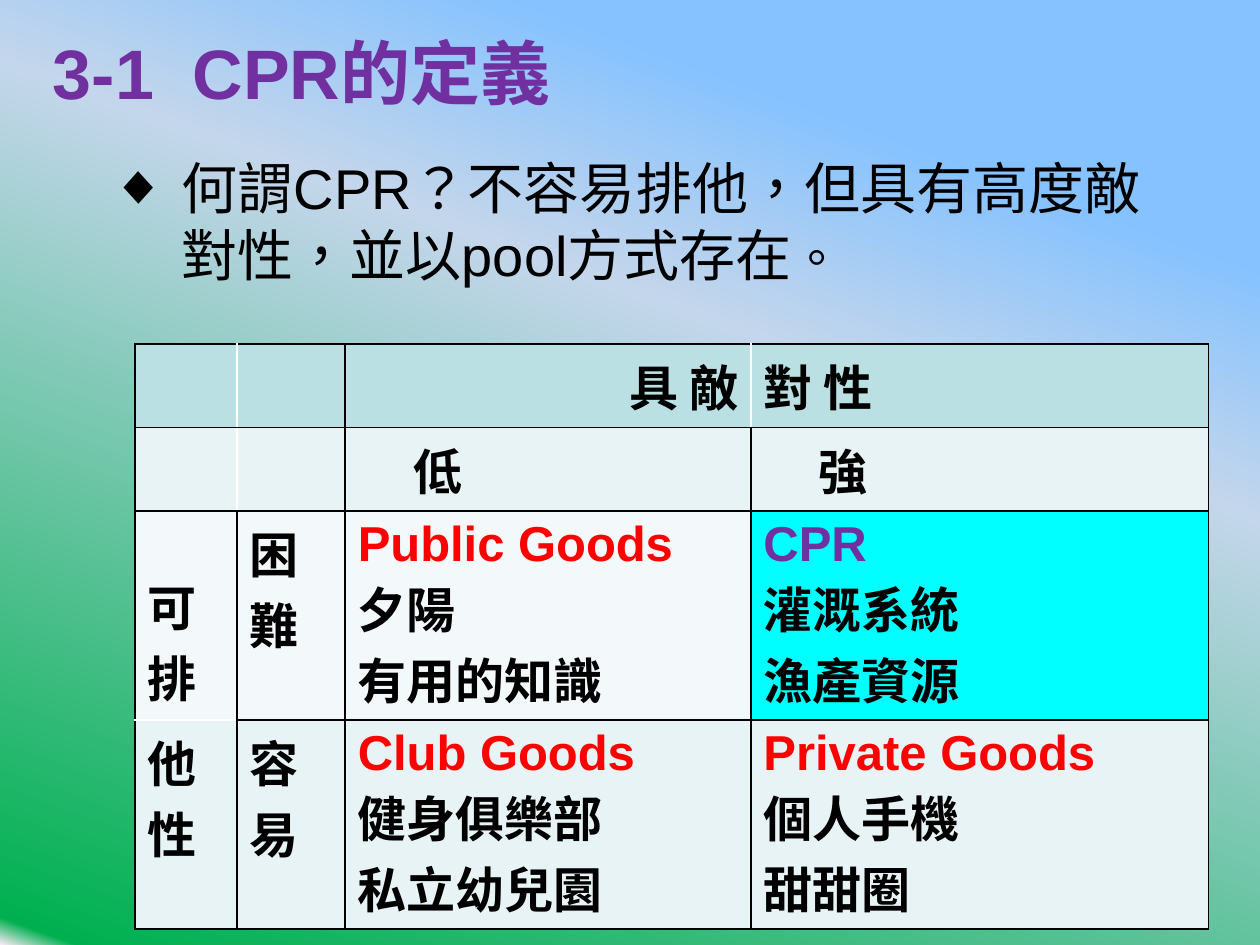
from lxml import etree
from pptx import Presentation
from pptx.dml.color import RGBColor
from pptx.enum.lang import MSO_LANGUAGE_ID
from pptx.enum.text import MSO_ANCHOR, MSO_AUTO_SIZE, PP_ALIGN
from pptx.oxml import parse_xml
from pptx.oxml.ns import nsdecls, qn
from pptx.util import Inches, Pt

LEFT, RIGHT = PP_ALIGN.LEFT, PP_ALIGN.RIGHT
MIDDLE, TOP = MSO_ANCHOR.MIDDLE, MSO_ANCHOR.TOP
NO_FIT = MSO_AUTO_SIZE.NONE
LANGUAGE = MSO_LANGUAGE_ID.TRADITIONAL_CHINESE

COLORS = {
    "black": "000000", "white": "FFFFFF", "purple": "7030A0", "red": "FF0000",
    "header": "BBE0E3", "band": "E7F3F4", "pale": "F3F9FA", "cyan": "00FFFF",
}
BACKGROUND_STOPS = [(19, "85C2FF"), (37, "C4D6EB"), (98, "00B050"), (100, "FFEBFA")]
BACKGROUND_ANGLE = 110

COLUMN_WIDTHS = [0.81, 0.86, 3.22, 3.63]
ROW_HEIGHTS = [0.66, 0.66, 1.66, 1.66]
ROW_FILLS = ["header", "band", "pale", "band"]
CELLS = [
    [[], [], ["具 敵"], ["對 性"]],
    [[], [], ["低"], ["強"]],
    [["可", "排"], ["困", "難"],
     ["Public Goods", "夕陽", "有用的知識"], ["CPR", "灌溉系統", "漁產資源"]],
    [["他", "性"], ["容", "易"],
     ["Club Goods", "健身俱樂部", "私立幼兒園"],
     ["Private Goods", "個人手機", "甜甜圈"]],
]
CPR_CELL = (2, 3)
WHITE_RIGHT = {(0, 0), (1, 0), (0, 2)}
WHITE_BOTTOM = {(2, 0)}


def add_text(paragraph, text, size=28, color="black", bold=False, align=LEFT):
    paragraph.alignment = align
    run = paragraph.add_run()
    run.text = text
    run.font.name = "Arial"
    run.font.size = Pt(size)
    run.font.bold = bold
    run.font.color.rgb = RGBColor.from_string(COLORS[color])
    run.font.language_id = LANGUAGE


class SlideBuilder:
    def __init__(self, slide):
        self.slide = slide

    def background(self):
        stops = "".join(
            f'<a:gs pos="{position * 1000}"><a:srgbClr val="{color}"/></a:gs>'
            for position, color in BACKGROUND_STOPS)
        background = parse_xml(
            f'<p:bg {nsdecls("p", "a")}><p:bgPr><a:gradFill rotWithShape="1">'
            f'<a:gsLst>{stops}</a:gsLst><a:lin ang="{BACKGROUND_ANGLE * 60000}" scaled="0"/>'
            '</a:gradFill><a:effectLst/></p:bgPr></p:bg>')
        self.slide.element.cSld.insert(0, background)

    def place(self, shape, left, top, width, height, anchor):
        shape.left, shape.top = Inches(left), Inches(top)
        shape.width, shape.height = Inches(width), Inches(height)
        frame = shape.text_frame
        frame.auto_size = NO_FIT
        frame.word_wrap = True
        frame.vertical_anchor = anchor
        return frame.paragraphs[0]

    def title(self, text):
        paragraph = self.place(self.slide.shapes.title, 0.32, 0, 9.68, 1.14, MIDDLE)
        add_text(paragraph, text, size=40, color="purple", bold=True)

    def bullet(self, runs):
        paragraph = self.place(self.slide.placeholders[1], 0.78, 1.17, 8.8, 1.47, TOP)
        paragraph.level = 1
        for text, size in runs:
            add_text(paragraph, text, size=size)
        properties = paragraph._p.get_or_add_pPr()
        properties.set("marL", str(Inches(0.56)))
        properties.set("indent", str(-Inches(0.56)))
        etree.SubElement(properties, qn("a:buFont"), typeface="Arial")
        etree.SubElement(properties, qn("a:buChar"), char="◆")

    def border(self, cell, side, color):
        cell._tc.get_or_add_tcPr().append(parse_xml(
            f'<a:ln{side} {nsdecls("a")} w="12700"><a:solidFill>'
            f'<a:srgbClr val="{COLORS[color]}"/></a:solidFill></a:ln{side}>'))

    def cell(self, cell, row, column, lines):
        white_sides = {
            "L": (row, column - 1) in WHITE_RIGHT,
            "R": (row, column) in WHITE_RIGHT,
            "T": (row - 1, column) in WHITE_BOTTOM,
            "B": (row, column) in WHITE_BOTTOM,
        }
        for side, is_white in white_sides.items():
            self.border(cell, side, "white" if is_white else "black")
        is_cpr = (row, column) == CPR_CELL
        cell.fill.solid()
        cell.fill.fore_color.rgb = RGBColor.from_string(
            COLORS["cyan" if is_cpr else ROW_FILLS[row]])
        if row == 1 and column >= 2:
            cell.margin_left = Inches(0.54)
        if (row, column) == (2, 0):
            cell.margin_top = Inches(0.47)
        for index, line in enumerate(lines):
            frame = cell.text_frame
            paragraph = frame.add_paragraph() if index else frame.paragraphs[0]
            color = "black"
            if row >= 2 and column >= 2 and index == 0:
                color = "purple" if is_cpr else "red"
            align = RIGHT if (row, column) == (0, 2) else LEFT
            add_text(paragraph, line, color=color, bold=True, align=align)

    def table(self, left, top):
        table = self.slide.shapes.add_table(
            len(ROW_HEIGHTS), len(COLUMN_WIDTHS), Inches(left), Inches(top),
            Inches(sum(COLUMN_WIDTHS)), Inches(sum(ROW_HEIGHTS))).table
        for column, width in zip(table.columns, COLUMN_WIDTHS):
            column.width = Inches(width)
        for row, height in zip(table.rows, ROW_HEIGHTS):
            row.height = Inches(height)
        for row, row_cells in enumerate(CELLS):
            for column, lines in enumerate(row_cells):
                self.cell(table.cell(row, column), row, column, lines)


def main():
    presentation = Presentation()
    presentation.slide_width = Inches(10)
    presentation.slide_height = Inches(7.5)
    slide = presentation.slides.add_slide(presentation.slide_layouts[1])
    builder = SlideBuilder(slide)
    builder.background()
    builder.title("3-1  CPR的定義")
    builder.bullet([("何謂CPR？不容易排他，但具有高度敵對性，並以pool方式存在", 32), ("。", 28)])
    builder.table(1.07, 2.73)
    presentation.save("out.pptx")


if __name__ == "__main__":
    main()
